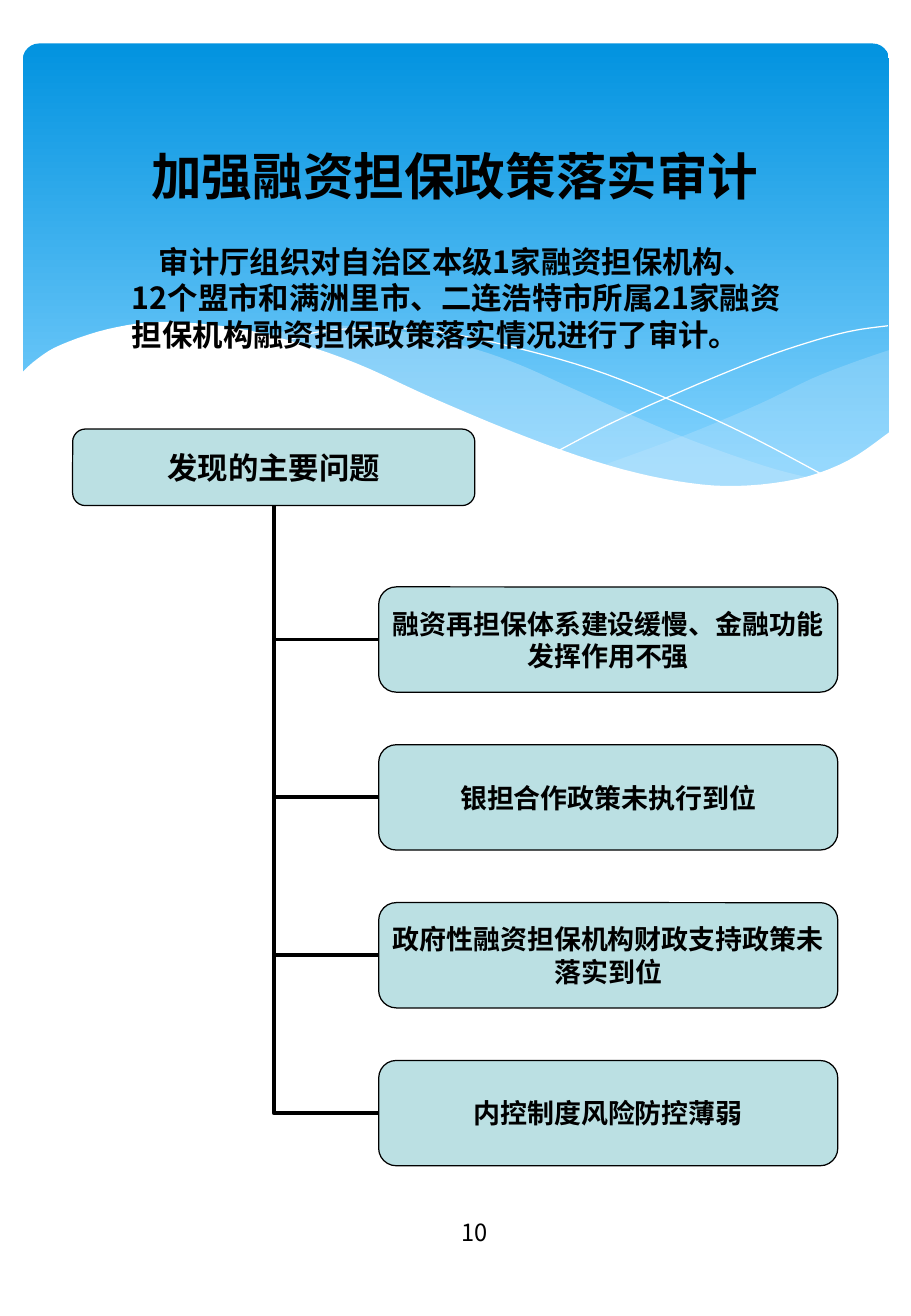
from dataclasses import dataclass

from lxml import etree
from pptx import Presentation, util as u
from pptx.dml.color import RGBColor
from pptx.enum import shapes, text
from pptx.oxml import ns

Cm, Pt = u.Cm, u.Pt


@dataclass(frozen=True)
class Theme:
    font: str = "Noto Sans CJK SC"
    ink: str = "000000"
    box: str = "BBE0E3"
    paper: str = "FFFFFF"
    sky_top: str = "0293E0"
    sky_bottom: str = "83D3FE"
    veil: str = "C6E7FC"
    title: int = 30
    body: int = 18
    detail: int = 16
    page: int = 14


THEME = Theme()
TOP, LEFT_SIDE, BOTTOM_SIDE = 0, 1, 2

# Key points of the curves, in centimetres.
RIGHT_VEIL = [
    [(18.59, 7.32), (17.81, 7.59), (16.97, 7.92), (15.85, 8.46), (14.35, 9.09), (12.6, 9.73)],
    [(12.6, 9.73), (13.69, 10.01), (14.88, 10.16), (15.9, 10.16), (16.94, 9.98),
     (17.83, 9.6), (18.59, 9.07)],
]
LEFT_VEIL = [
    [(17.02, 10.01), (15.95, 9.73), (14.12, 9.07), (11.99, 8.13), (10.85, 7.62),
     (9.8, 7.26), (8.41, 6.93), (6.88, 6.81), (5.46, 7.01)],
    [(5.46, 7.01), (6.91, 7.44), (8.56, 8.13), (10.08, 8.81), (11.76, 9.47),
     (13.23, 9.91), (14.73, 10.19), (15.98, 10.21), (17.02, 10.01)],
]
FALLING_LINE = [(5.89, 7.16), (6.71, 6.93), (7.92, 6.86), (9.32, 6.96), (11.07, 7.34),
                (12.67, 7.82), (14.48, 8.56), (15.82, 9.19), (17.27, 9.96)]
RISING_LINE = [(11.68, 9.42), (12.8, 8.84), (14.25, 8.18), (15.93, 7.49), (17.07, 7.11),
               (17.86, 6.91), (18.57, 6.81)]
WHITE_WAVE = [
    [(18.62, 9.02), (17.73, 9.63), (16.69, 10.01), (15.39, 10.16), (14.17, 10.06),
     (12.73, 9.73), (11.02, 9.14), (9.07, 8.33), (7.44, 7.59), (6.02, 7.11), (4.75, 6.83),
     (3.35, 6.73), (2.26, 6.88), (1.27, 7.21), (0.76, 7.52), (0.43, 7.82)],
    [(0.43, 12.07), (18.62, 12.07)],
]

PROBLEMS = [
    "融资再担保体系建设缓慢、金融功能发挥作用不强",
    "银担合作政策未执行到位",
    "政府性融资担保机构财政支持政策未落实到位",
    "内控制度风险防控薄弱",
]


def rgb(value):
    return RGBColor.from_string(value)


def apply(target, values):
    for name, value in values.items():
        setattr(target, name, value)


def smooth(points, steps=5):
    """Return points along a Catmull-Rom curve through the key points."""
    padded = [points[0], *points, points[-1]]
    curve = [points[0]]
    for a, b, c, d in zip(padded, padded[1:], padded[2:], padded[3:]):
        for step in range(1, steps + 1):
            t = step / steps
            curve.append(tuple(
                (2 * q + (r - p) * t + (2 * p - 5 * q + 4 * r - s) * t ** 2
                 + (3 * q - p - 3 * r + s) * t ** 3) / 2
                for p, q, r, s in zip(a, b, c, d)))
    return curve


def add_curve(slide, pieces, fill=None, opacity=100):
    """Draw a filled outline, or a white hairline when no fill is given."""
    points = [(Cm(x), Cm(y)) for piece in pieces
              for x, y in (smooth(piece) if len(piece) > 2 else piece)]
    builder = slide.shapes.build_freeform(*points[0], scale=1.0)
    builder.add_line_segments(points[1:], close=fill is not None)
    shape = builder.convert_to_shape()
    shape.shadow.inherit = False
    if fill is None:
        shape.fill.background()
        shape.line.color.rgb = rgb(THEME.paper)
        shape.line.width = Pt(0)
        return
    shape.fill.solid()
    shape.fill.fore_color.rgb = rgb(fill)
    shape.line.fill.background()
    if opacity < 100:
        color = shape.element.spPr.find(".//" + ns.qn("a:srgbClr"))
        etree.SubElement(color, ns.qn("a:alpha"), val=str(opacity * 1000))


def add_sky(slide):
    sky = slide.shapes.add_shape(shapes.MSO_SHAPE.ROUNDED_RECTANGLE,
                                 Cm(0.48), Cm(0.91), Cm(18.11), Cm(9.91))
    sky.adjustments[0] = 0.034
    sky.shadow.inherit = False
    sky.line.fill.background()
    sky.fill.gradient()
    sky.fill.gradient_angle = 270
    stops = [(0, THEME.sky_top), (0.9, THEME.sky_bottom)]
    for stop, (position, color) in zip(sky.fill.gradient_stops, stops):
        stop.position = position
        stop.color.rgb = rgb(color)


def write(shape, words, size, bold=True, align=text.PP_ALIGN.CENTER, **frame_values):
    frame = shape.text_frame
    apply(frame, {"word_wrap": True, **frame_values})
    paragraph = frame.paragraphs[0]
    paragraph.alignment = align
    run = paragraph.add_run()
    run.text = words
    apply(run.font, {"name": THEME.font, "size": Pt(size), "bold": bold})
    run.font.color.rgb = rgb(THEME.ink)
    etree.SubElement(run.font._element, ns.qn("a:ea"), typeface=THEME.font)
    return paragraph


def add_text(slide, left, top, width, height, words, size, **values):
    box = slide.shapes.add_textbox(Cm(left), Cm(top), Cm(width), Cm(height))
    return write(box, words, size, **values)


def add_box(slide, left, top, width, height, words, size):
    box = slide.shapes.add_shape(shapes.MSO_SHAPE.ROUNDED_RECTANGLE,
                                 Cm(left), Cm(top), Cm(width), Cm(height))
    box.shadow.inherit = False
    box.fill.solid()
    box.fill.fore_color.rgb = rgb(THEME.box)
    box.line.color.rgb = rgb(THEME.ink)
    box.line.width = Pt(0.75)
    margins = {f"margin_{side}": 0 for side in ("left", "top", "right", "bottom")}
    write(box, words, size, vertical_anchor=text.MSO_ANCHOR.MIDDLE, **margins)
    return box


def add_branch(slide, heading, problem):
    """Join a problem's left side to the heading's bottom with one bend."""
    branch = slide.shapes.add_connector(shapes.MSO_CONNECTOR.ELBOW, 0, 0, 0, 0)
    branch.begin_connect(problem, LEFT_SIDE)
    branch.end_connect(heading, BOTTOM_SIDE)
    branch.line.color.rgb = rgb(THEME.ink)
    branch.line.width = Pt(2.25)
    properties = branch._element.spPr
    properties.find(ns.qn("a:prstGeom")).set("prst", "bentConnector2")
    etree.SubElement(properties, ns.qn("a:effectLst"))


def main():
    presentation = Presentation()
    apply(presentation, {"slide_width": Cm(19.05), "slide_height": Cm(27.51)})
    slide = presentation.slides.add_slide(presentation.slide_layouts[6])

    add_sky(slide)
    add_curve(slide, RIGHT_VEIL, THEME.veil, 29)
    add_curve(slide, LEFT_VEIL, THEME.veil, 40)
    add_curve(slide, [FALLING_LINE])
    add_curve(slide, [RISING_LINE])
    add_curve(slide, WHITE_WAVE, THEME.paper)

    grow = text.MSO_AUTO_SIZE.SHAPE_TO_FIT_TEXT
    title = add_text(slide, 0.89, 2.77, 17.25, 1.68, "加强融资担保政策落实审计",
                     THEME.title, auto_size=grow)
    title.line_spacing = Pt(40)
    add_text(slide, 8.33, 24.77, 3.2, 1.96, "10", THEME.page, bold=False,
             vertical_anchor=text.MSO_ANCHOR.MIDDLE)

    heading = add_box(slide, 1.52, 8.97, 8.41, 1.6, "发现的主要问题", THEME.body)
    for row, words in enumerate(PROBLEMS):
        problem = add_box(slide, 7.92, 12.27 + 3.3 * row, 9.6, 2.2, words, THEME.detail)
        add_branch(slide, heading, problem)

    summary = add_text(
        slide, 2.51, 4.95, 14.2, 2.57,
        "审计厅组织对自治区本级1家融资担保机构、12个盟市和满洲里市、二连浩特市所属21家"
        "融资担保机构融资担保政策落实情况进行了审计。",
        THEME.body, align=text.PP_ALIGN.LEFT, auto_size=grow)
    summary._p.get_or_add_pPr().set("indent", str(Cm(0.56)))

    presentation.save("out.pptx")


if __name__ == "__main__":
    main()
